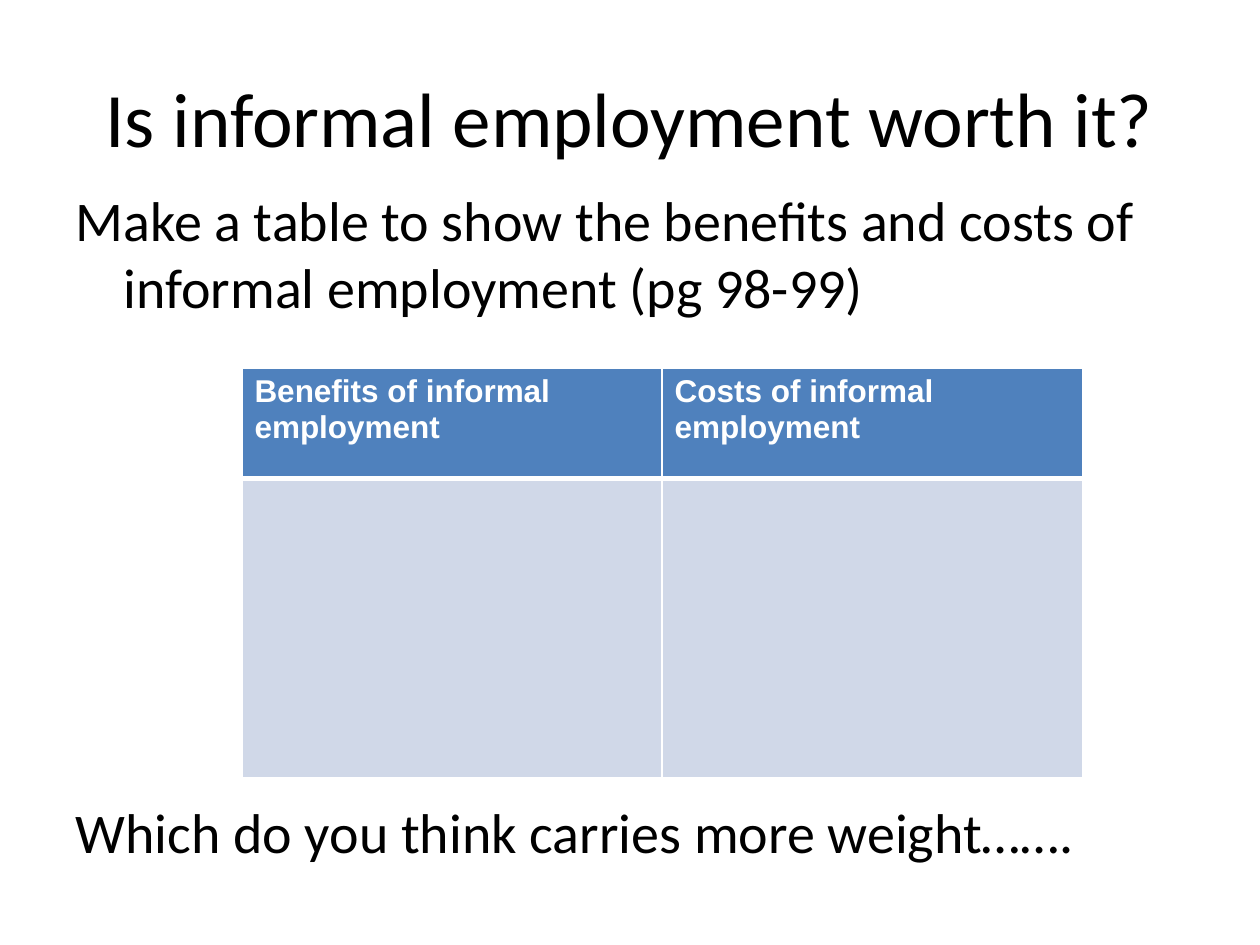
from dataclasses import dataclass

from lxml import etree
from pptx import Presentation
from pptx.dml.color import RGBColor
from pptx.enum.text import MSO_ANCHOR, MSO_AUTO_SIZE, PP_ALIGN
from pptx.oxml.ns import qn
from pptx.util import Inches, Pt

CENTER = PP_ALIGN.CENTER
LEFT = PP_ALIGN.LEFT
MIDDLE = MSO_ANCHOR.MIDDLE
TOP = MSO_ANCHOR.TOP
NO_FIT = MSO_AUTO_SIZE.NONE


@dataclass(frozen=True)
class Theme:
    """Fonts, colours and type sizes of the slide."""
    main_font: str = "Calibri"
    table_font: str = "Arial"
    ink: str = "000000"
    paper: str = "FFFFFF"
    header: str = "4F81BD"
    band: str = "D0D8E8"
    title_size: int = 44
    body_size: int = 32
    table_size: int = 18


THEME = Theme()


def write(p, text, *, size, font=THEME.main_font, color=THEME.ink,
          bold=False, align=LEFT, before=0):
    """Write one formatted run into a paragraph."""
    p.alignment = align
    p.space_before = Pt(before)
    r = p.add_run()
    r.text = text
    r.font.name = font
    r.font.size = Pt(size)
    r.font.bold = bold
    r.font.color.rgb = RGBColor.from_string(color)


def place(sp, box, anchor):
    """Move a placeholder to a box and prepare its text frame."""
    sp.left, sp.top, sp.width, sp.height = box
    tf = sp.text_frame
    tf.word_wrap = True
    tf.auto_size = NO_FIT
    tf.vertical_anchor = anchor
    return tf


def hang(p, indent):
    """Give a paragraph a hanging indent without a bullet."""
    pPr = p._p.get_or_add_pPr()
    pPr.set("marL", str(indent))
    pPr.set("indent", str(-indent))
    etree.SubElement(pPr, qn("a:buNone"))


def border(cell, color, **widths):
    """Draw the cell's borders with the given widths in points."""
    tcPr = cell._tc.get_or_add_tcPr()
    for side in "LRTB":
        ln = etree.SubElement(tcPr, qn(f"a:ln{side}"), w=str(Pt(widths.get(side, 1))))
        fill = etree.SubElement(ln, qn("a:solidFill"))
        etree.SubElement(fill, qn("a:srgbClr"), val=color)


def add_title(s, box, text):
    """Fill the title placeholder."""
    tf = place(s.shapes.title, box, MIDDLE)
    write(tf.paragraphs[0], text, size=THEME.title_size, align=CENTER)


def add_body(s, box, task, question, gap):
    """Fill the body with the task and, below a gap, the question."""
    tf = place(s.placeholders[1], box, TOP)
    for p, text, before in ((tf.paragraphs[0], task, 0),
                            (tf.add_paragraph(), question, gap)):
        write(p, text, size=THEME.body_size, before=before)
        hang(p, Inches(0.38))


def add_comparison(s, box, headings, header_height):
    """Add a table with a heading row above one empty row."""
    left, top, width, height = box
    table = s.shapes.add_table(2, len(headings), left, top, width, height).table
    table.rows[0].height = header_height
    table.rows[1].height = height - header_height
    for col, text in enumerate(headings):
        table.columns[col].width = width // len(headings)
        head, blank = table.cell(0, col), table.cell(1, col)
        write(head.text_frame.paragraphs[0], text, size=THEME.table_size,
              font=THEME.table_font, color=THEME.paper, bold=True)
        border(head, THEME.paper, B=3)
        border(blank, THEME.paper, T=3)
        for cell, color in ((head, THEME.header), (blank, THEME.band)):
            cell.fill.solid()
            cell.fill.fore_color.rgb = RGBColor.from_string(color)


def main():
    """Build and save the slide."""
    prs = Presentation()
    prs.slide_width, prs.slide_height = Inches(10), Inches(7.5)
    s = prs.slides.add_slide(prs.slide_layouts[1])
    add_title(s, (Inches(0.5), Inches(0.3), Inches(9), Inches(1.25)),
              "Is informal employment worth it?")
    add_body(s, (Inches(0.5), Inches(1.42), Inches(9), Inches(5.67)),
             "Make a table to show the benefits and costs of informal employment (pg 98-99)",
             "Which do you think carries more weight…….", gap=273)
    add_comparison(s, (Inches(1.92), Inches(2.92), Inches(6.67), Inches(3.25)),
                   ("Benefits of informal employment", "Costs of informal employment"),
                   Inches(0.88))
    prs.save("out.pptx")


if __name__ == "__main__":
    main()
